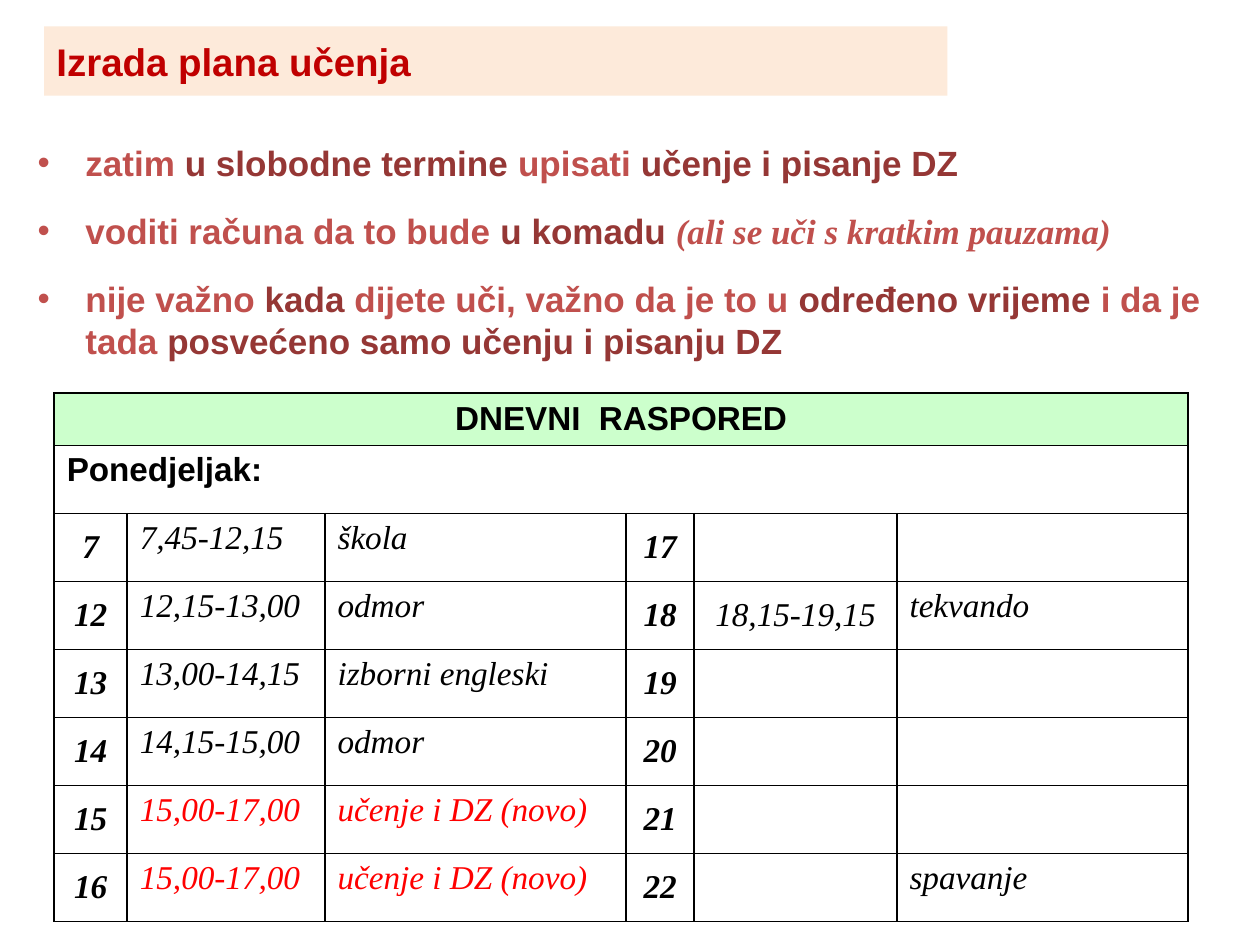
from lxml import etree
from pptx import Presentation
from pptx import util as u
from pptx.dml.color import RGBColor
from pptx.enum import shapes, text
from pptx.oxml.ns import qn

COLORS = {
    "title": "C00000", "title_fill": "FDEADA", "light": "C0504D", "dark": "953735",
    "black": "000000", "study": "FF0000", "header": "CCFFCC",
}
SANS, SERIF = "Arial", "Times New Roman"
CENTER, MIDDLE = text.PP_ALIGN.CENTER, text.MSO_ANCHOR.MIDDLE

ADVICE = [
    [("zatim ", "light"), ("u slobodne termine ", "dark"), ("upisati ", "light"),
     ("učenje i pisanje DZ", "dark")],
    [("voditi računa da to bude ", "light"), ("u komadu ", "dark"),
     ("(ali se uči s kratkim pauzama)", "aside")],
    [("nije važno ", "light"), ("kada ", "dark"),
     ("dijete uči, važno da je to u ", "light"), ("određeno vrijeme ", "dark"),
     ("i da je tada ", "light"), ("posvećeno samo učenju i pisanju DZ", "dark")],
]
COLUMN_WIDTHS = [0.58, 1.57, 2.39, 0.54, 1.61, 2.31]
HEADER_HEIGHT, ROW_HEIGHT = 0.39, 0.54
SCHEDULE = [
    ("7", "7,45-12,15", "škola", "17", "", ""),
    ("12", "12,15-13,00", "odmor", "18", "18,15-19,15", "tekvando"),
    ("13", "13,00-14,15", "izborni engleski", "19", "", ""),
    ("14", "14,15-15,00", "odmor", "20", "", ""),
    ("15", "15,00-17,00", "učenje i DZ (novo)", "21", "", ""),
    ("16", "15,00-17,00", "učenje i DZ (novo)", "22", "", "spavanje"),
]
HOUR_COLUMNS, CENTERED_COLUMNS = (0, 3), (0, 3, 4)


def rgb(name):
    return RGBColor.from_string(COLORS[name])


def style(font, size, color, name=SANS, bold=True, italic=False):
    font.size, font.name = u.Pt(size), name
    font.bold, font.italic = bold, italic
    font.color.rgb = rgb(color)


def add_title(slide, wording):
    box = slide.shapes.add_shape(shapes.MSO_SHAPE.RECTANGLE, u.Inches(0.35),
                                 u.Inches(0.21), u.Inches(7.17), u.Inches(0.55))
    box.shadow.inherit = False
    box.fill.solid()
    box.fill.fore_color.rgb = rgb("title_fill")
    box.line.fill.background()
    box.text_frame.vertical_anchor = MIDDLE
    box.text_frame.word_wrap = True
    para = box.text_frame.paragraphs[0]
    para.text = wording
    para.alignment = text.PP_ALIGN.LEFT
    style(para.font, 22, "title")


def add_bullet(para):
    properties = para._p.get_or_add_pPr()
    indent = u.Inches(0.38)
    properties.set("marL", str(indent))
    properties.set("indent", str(-indent))
    etree.SubElement(properties, qn("a:buFont")).set("typeface", SANS)
    etree.SubElement(properties, qn("a:buChar")).set("char", "•")


def add_advice(slide):
    box = slide.shapes.add_textbox(u.Inches(0.2), u.Inches(1.07),
                                   u.Inches(9.53), u.Inches(1.81))
    frame = box.text_frame
    frame.word_wrap = True
    for index, spans in enumerate(ADVICE):
        para = frame.add_paragraph() if index else frame.paragraphs[0]
        para.space_before, para.space_after = u.Pt(4), u.Pt(11)
        add_bullet(para)
        for wording, role in spans:
            span = para.add_run()
            span.text = wording
            if role == "aside":
                style(span.font, 20, "light", SERIF, italic=True)
            else:
                style(span.font, 20, role)


def add_borders(cell):
    properties = cell._tc.get_or_add_tcPr()
    for index, side in enumerate(("lnL", "lnR", "lnT", "lnB")):
        line = etree.Element(qn(f"a:{side}"), w=str(u.Pt(1)))
        fill = etree.SubElement(line, qn("a:solidFill"))
        etree.SubElement(fill, qn("a:srgbClr")).set("val", COLORS["black"])
        properties.insert(index, line)


def write_cell(cell, wording, centered, **look):
    para = cell.text_frame.paragraphs[0]
    para.text = wording
    if centered:
        para.alignment = CENTER
        cell.vertical_anchor = MIDDLE
    style(para.font, 19, **look)


def add_schedule(slide):
    row_count = len(SCHEDULE) + 2
    height = HEADER_HEIGHT + ROW_HEIGHT * (row_count - 1)
    table = slide.shapes.add_table(row_count, len(COLUMN_WIDTHS), u.Inches(0.43),
                                   u.Inches(3.12), u.Inches(sum(COLUMN_WIDTHS)),
                                   u.Inches(height)).table
    table.first_row = table.horz_banding = False
    for column, width in zip(table.columns, COLUMN_WIDTHS):
        column.width = u.Inches(width)
    for index, row in enumerate(table.rows):
        row.height = u.Inches(ROW_HEIGHT if index else HEADER_HEIGHT)
    for cell in table.iter_cells():
        cell.fill.background()
        add_borders(cell)

    for index, wording in enumerate(("DNEVNI  RASPORED", "Ponedjeljak:")):
        cell = table.cell(index, 0)
        cell.merge(table.cell(index, len(COLUMN_WIDTHS) - 1))
        write_cell(cell, wording, index == 0, color="black")
    header = table.cell(0, 0)
    header.fill.solid()
    header.fill.fore_color.rgb = rgb("header")

    for row, entries in enumerate(SCHEDULE, start=2):
        studying = entries[2].startswith("učenje")
        for column, wording in enumerate(entries):
            if wording:
                color = "study" if studying and column in (1, 2) else "black"
                write_cell(table.cell(row, column), wording, column in CENTERED_COLUMNS,
                           color=color, name=SERIF, bold=column in HOUR_COLUMNS,
                           italic=True)


def main():
    deck = Presentation()
    deck.slide_width, deck.slide_height = u.Inches(10), u.Inches(7.5)
    slide = deck.slides.add_slide(deck.slide_layouts[6])
    add_advice(slide)
    add_title(slide, "Izrada plana učenja")
    add_schedule(slide)
    deck.save("out.pptx")


if __name__ == "__main__":
    main()
